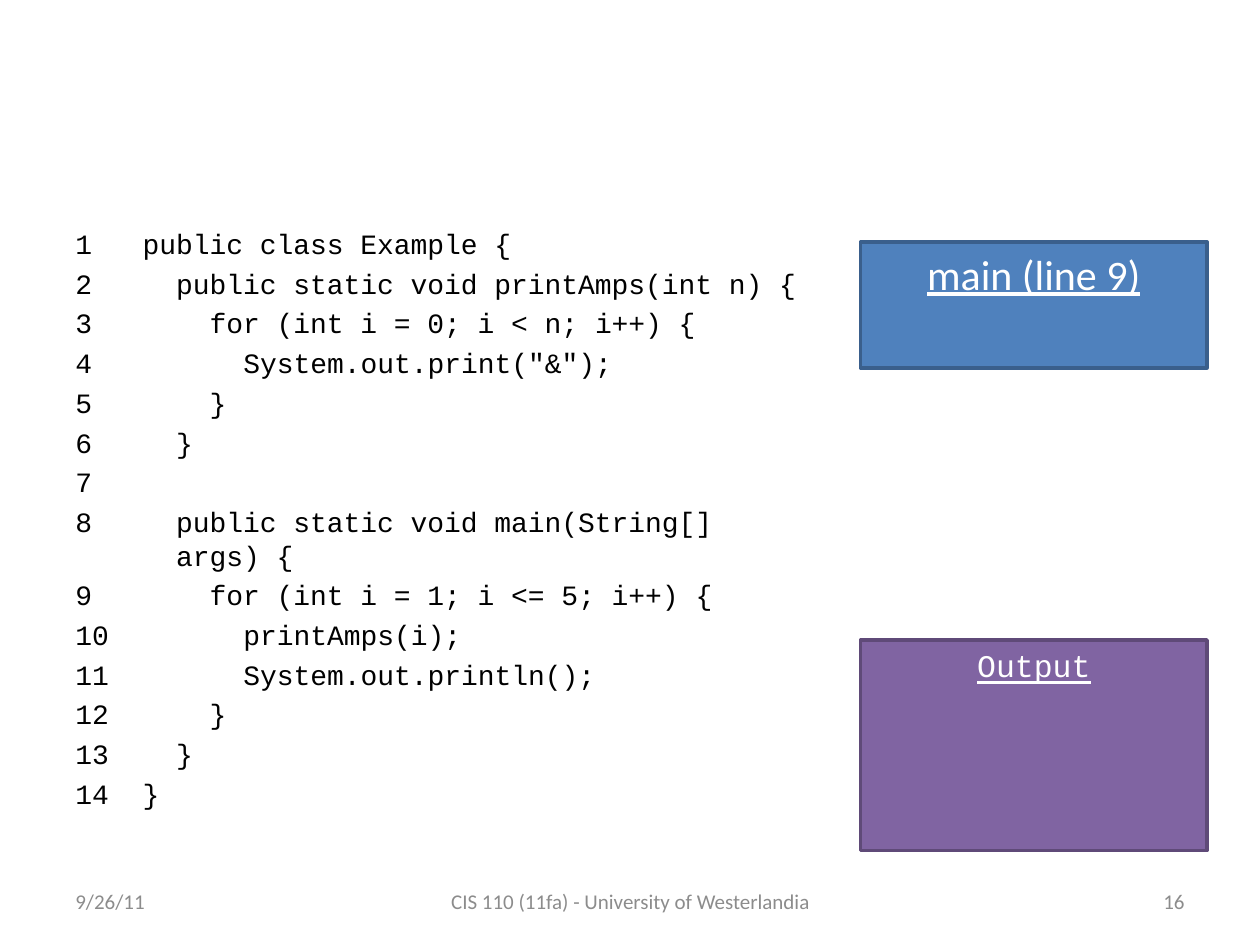
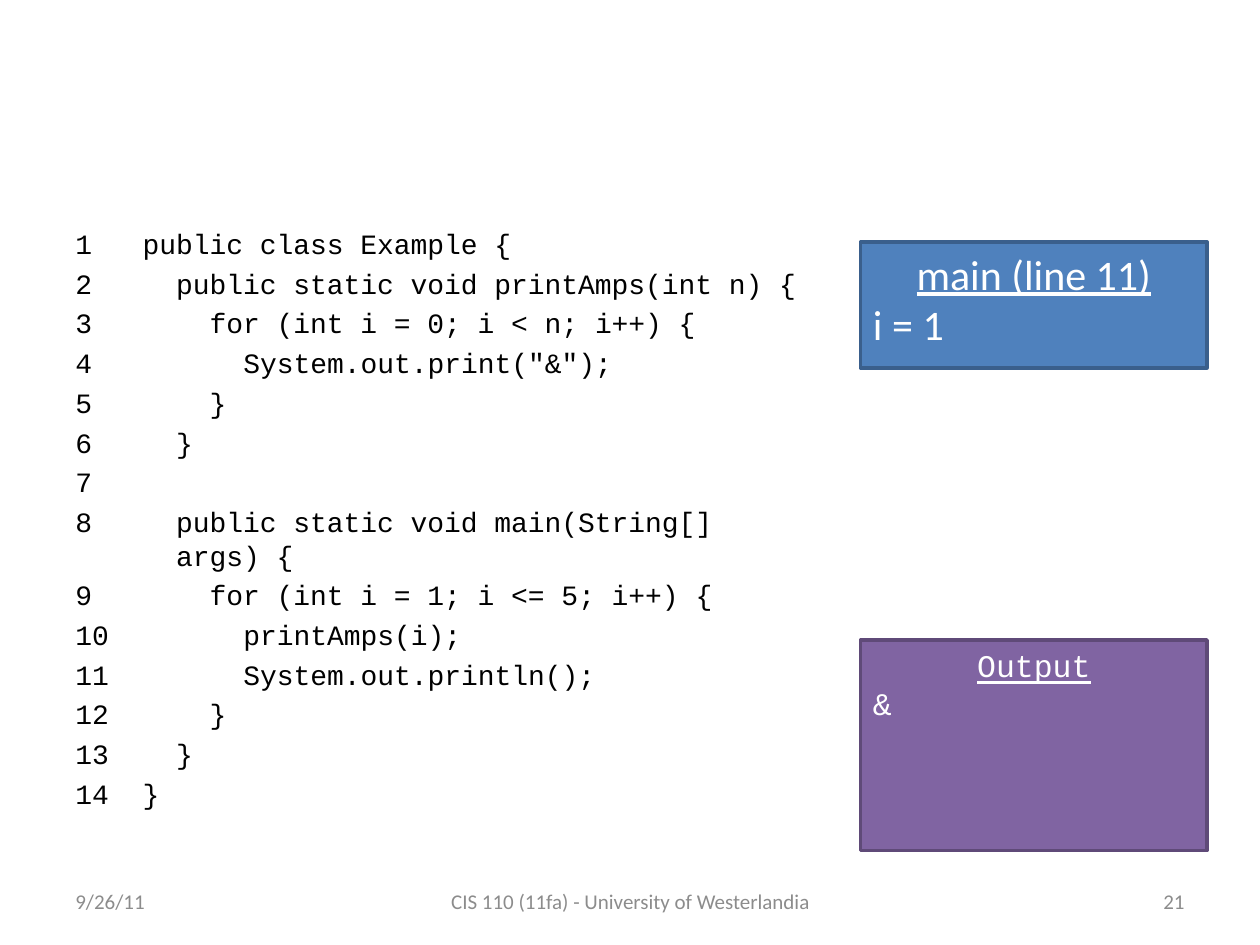
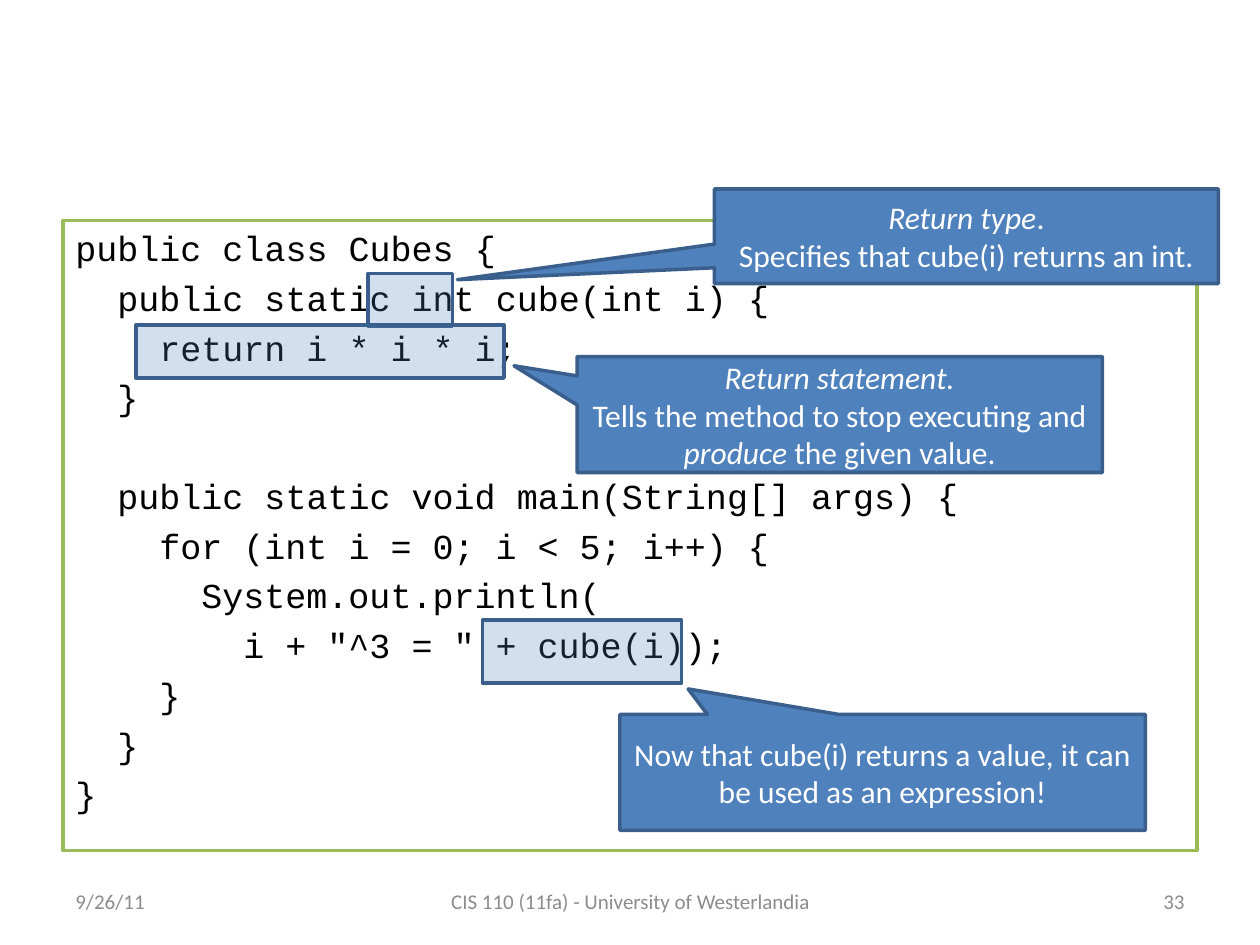
from dataclasses import dataclass

from lxml import etree
from pptx import Presentation
from pptx.dml.color import RGBColor
from pptx.enum.shapes import MSO_SHAPE as SHAPE
from pptx.enum.text import MSO_ANCHOR as ANCHOR, PP_ALIGN as ALIGN
from pptx.oxml.ns import qn
from pptx.util import Inches, Pt


@dataclass(frozen=True)
class Theme:
    body: str = "Calibri"
    code: str = "Courier New"
    black: str = "000000"
    white: str = "FFFFFF"
    gray: str = "8C8C8C"
    blue: str = "4F81BD"
    blue_edge: str = "3A5F8C"
    purple: str = "8064A2"
    purple_edge: str = "5F4A78"
    green: str = "9BBB59"
    edge_width: int = 2
    footer_size: int = 12
    listing_size: int = 16
    note_size: int = 18
    cubes_size: int = 20
    frame_size: int = 24
    char_width: float = 0.6    # of the code type size
    code_gap: float = 0.22     # space before a code line, of the type size
    blank_line: float = 1.4    # height of an empty code line, of the type size


T = Theme()

# Code lines: (nesting level, text)
EXAMPLE = [
    (0, "public class Example {"),
    (1, "public static void printAmps(int n) {"),
    (2, "for (int i = 0; i < n; i++) {"),
    (3, 'System.out.print("&");'),
    (2, "}"),
    (1, "}"),
    (0, ""),
    (1, "public static void main(String[] args) {"),
    (2, "for (int i = 1; i <= 5; i++) {"),
    (3, "printAmps(i);"),
    (3, "System.out.println();"),
    (2, "}"),
    (1, "}"),
    (0, "}"),
]
CUBES = [
    (0, "public class Cubes {"),
    (1, "public static int cube(int i) {"),
    (2, "return i * i * i;"),
    (1, "}"),
    (0, ""),
    (1, "public static void main(String[] args) {"),
    (2, "for (int i = 0; i < 5; i++) {"),
    (3, "System.out.println("),
    (4, 'i + "^3 = " + cube(i));'),
    (2, "}"),
    (1, "}"),
    (0, "}"),
]


def rgb(value):
    return RGBColor.from_string(value)


def add_run(p, text, size, color, font=T.body, italic=None, underline=None):
    r = p.add_run()
    r.text = text
    f = r.font
    f.name, f.size, f.italic, f.underline = font, Pt(size), italic, underline
    f.color.rgb = rgb(color)


def next_paragraph(tf):
    """Return the first paragraph while it is unused, then new ones."""
    first = tf.paragraphs[0]
    return tf.add_paragraph() if first.runs else first


def add_text_box(s, at, anchor=ANCHOR.TOP):
    tf = s.shapes.add_textbox(*map(Inches, at)).text_frame
    tf.word_wrap = True
    tf.vertical_anchor = anchor
    return tf


def add_box(s, at, fill, edge, kind=SHAPE.RECTANGLE, anchor=ANCHOR.TOP):
    sp = s.shapes.add_shape(kind, *map(Inches, at))
    sp.shadow.inherit = False
    sp.fill.solid()
    sp.fill.fore_color.rgb = rgb(fill)
    sp.line.color.rgb = rgb(edge)
    sp.line.width = Pt(T.edge_width)
    sp.text_frame.word_wrap = True
    sp.text_frame.vertical_anchor = anchor
    return sp


def add_code(tf, lines, size, numbered=False):
    """Write code lines; the margin of each follows its nesting level."""
    blank = 0
    for number, (level, text) in enumerate(lines, 1):
        if not text and not numbered:
            blank = T.blank_line
            continue
        p = next_paragraph(tf)
        p.alignment = ALIGN.LEFT
        p.space_before = Pt(round((T.code_gap + blank) * size, 1))
        columns = 2 * level + (4 if numbered else 0)
        margin = Pt(columns * T.char_width * size)
        p_pr = p._p.get_or_add_pPr()
        p_pr.set("marL", str(margin))
        if numbered:
            p_pr.set("indent", str(-margin))
            text = f"{number}\t{text}" if text else str(number)
        add_run(p, text, size, T.black, T.code)
        blank = 0


def add_panel(s, at, fill, edge, heading, values, size, font):
    """Add a box with an underlined heading above left-aligned values."""
    tf = add_box(s, at, fill, edge).text_frame
    p = next_paragraph(tf)
    p.alignment = ALIGN.CENTER
    add_run(p, heading, size, T.white, font, underline=True)
    for value in values:
        p = next_paragraph(tf)
        p.alignment = ALIGN.LEFT
        add_run(p, value, size, T.white, font)


def add_callout(s, at, tip, paragraphs):
    """Add a callout; its paragraphs are lists of (text, italic)."""
    sp = add_box(s, at, T.blue, T.blue_edge,
                 SHAPE.RECTANGULAR_CALLOUT, ANCHOR.MIDDLE)
    for i, offset in enumerate(tip):
        sp.adjustments[i] = offset
    for runs in paragraphs:
        p = next_paragraph(sp.text_frame)
        p.alignment = ALIGN.CENTER
        for text, italic in runs:
            add_run(p, text, T.note_size, T.white, italic=italic)


def add_highlight(s, at):
    sp = add_box(s, at, T.blue, T.blue_edge)
    color = sp.fill._xPr.find(qn("a:solidFill"))[0]
    etree.SubElement(color, qn("a:alpha")).set("val", "25000")


def add_slide(prs, number):
    """Add a blank slide with the shared footer."""
    s = prs.slides.add_slide(prs.slide_layouts[6])
    footer = [
        (0.5, 2.33, ALIGN.LEFT, "9/26/11"),
        (3.42, 3.17, ALIGN.CENTER, "CIS 110 (11fa) - University of Westerlandia"),
        (7.17, 2.33, ALIGN.RIGHT, str(number)),
    ]
    for left, width, align, text in footer:
        tf = add_text_box(s, (left, 6.95, width, 0.4), ANCHOR.MIDDLE)
        p = next_paragraph(tf)
        p.alignment = align
        add_run(p, text, T.footer_size, T.gray)
    return s


def add_trace_slide(prs, number, line, variables=(), output=()):
    """Show the program with its current stack frame and output."""
    s = add_slide(prs, number)
    add_code(add_text_box(s, (0.5, 1.75, 6, 5)), EXAMPLE,
             T.listing_size, numbered=True)
    add_panel(s, (6.83, 5.08, 2.75, 1.67), T.purple, T.purple_edge,
              "Output", output, T.note_size, T.code)
    add_panel(s, (6.83, 1.92, 2.75, 1), T.blue, T.blue_edge,
              f"main (line {line})", variables, T.frame_size, T.body)


def add_cubes_slide(prs, number):
    s = add_slide(prs, number)
    listing = add_box(s, (0.5, 1.75, 9, 5), T.white, T.green)
    add_code(listing.text_frame, CUBES, T.cubes_size)
    add_callout(s, (5.67, 1.5, 4, 0.75), (-1.01, 0.46), [
        [("Return type", True), (".", False)],
        [("Specifies that cube(i) returns an int.", False)],
    ])
    add_callout(s, (4.58, 2.83, 4.17, 0.92), (-0.62, -0.42), [
        [("Return statement.", True)],
        [("Tells the method to stop executing and ", False),
         ("produce", True), (" the given value.", False)],
    ])
    add_highlight(s, (2.92, 2.17, 0.67, 0.42))
    add_highlight(s, (3.83, 4.92, 1.58, 0.5))
    add_callout(s, (4.92, 5.67, 4.17, 0.92), (-0.37, -0.72), [
        [("Now that cube(i) returns a value, it can be used as an expression!",
          False)],
    ])
    add_highlight(s, (1.08, 2.58, 2.92, 0.42))


def main():
    prs = Presentation()
    prs.slide_width, prs.slide_height = Inches(10), Inches(7.5)
    add_trace_slide(prs, 16, line=9)
    add_trace_slide(prs, 21, line=11, variables=["i = 1"], output=["&"])
    add_cubes_slide(prs, 33)
    prs.save("out.pptx")


if __name__ == "__main__":
    main()
